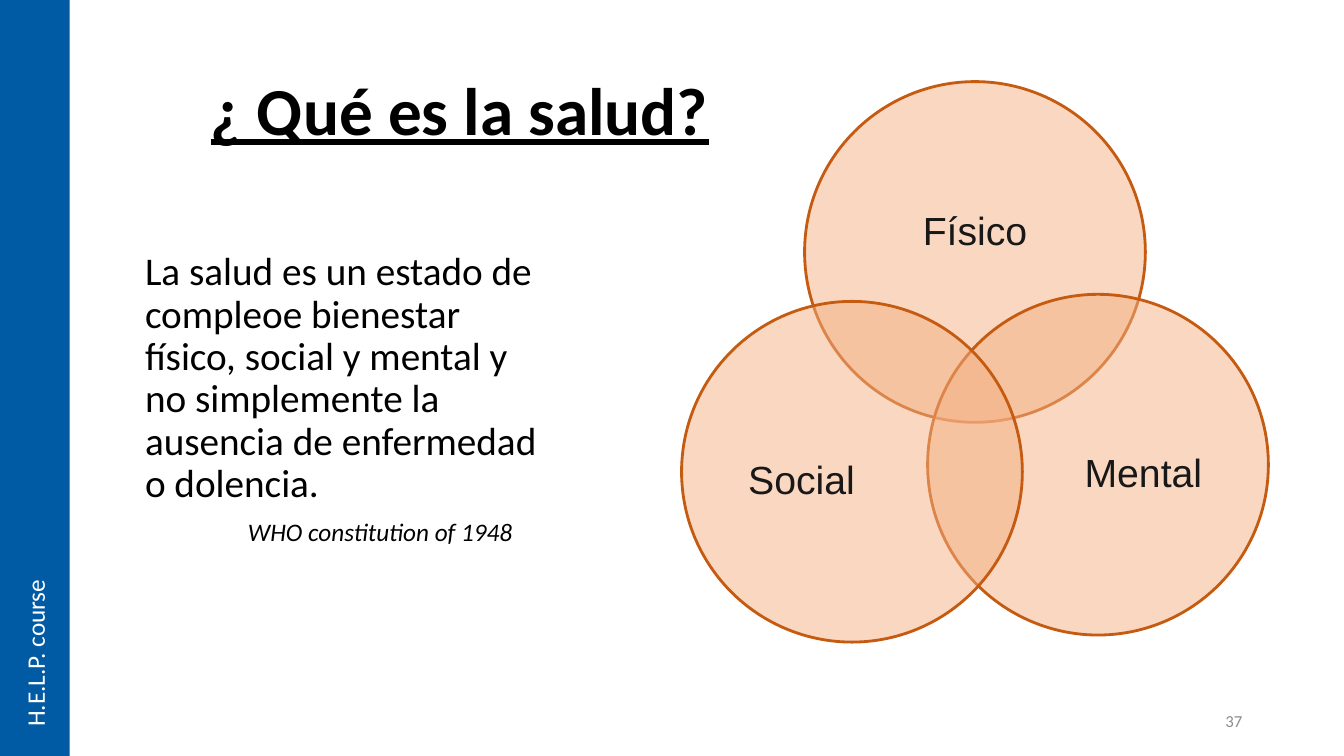
from lxml.etree import SubElement
from pptx import Presentation
from pptx.dml.color import RGBColor
from pptx.enum.shapes import MSO_SHAPE
from pptx.enum.text import MSO_ANCHOR, PP_ALIGN
from pptx.oxml.ns import qn
from pptx.util import Inches, Pt

COLORS = {
    "blue": "005BA4",
    "circle": "F4B183",
    "outline": "C55A11",
    "label": "181818",
    "black": "000000",
    "white": "FFFFFF",
    "gray": "8C8C8C",
}
CIRCLE_SIZE = 3.38


def color(name):
    return RGBColor.from_string(COLORS[name])


def style_paragraph(para, text, size, tint, font="Calibri", align=PP_ALIGN.LEFT, indent=0):
    para.text = text
    para.alignment = align
    para.font.name = font
    para.font.size = Pt(size)
    para.font.color.rgb = color(tint)
    if indent:
        properties = para._p.get_or_add_pPr()
        properties.set("marL", str(Inches(indent)))
        properties.set("indent", "0")


def add_text_frame(page, box, anchor=MSO_ANCHOR.MIDDLE):
    frame = page.shapes.add_textbox(*map(Inches, box)).text_frame
    frame.word_wrap = True
    frame.vertical_anchor = anchor
    return frame


def add_title(page, box):
    para = add_text_frame(page, box).paragraphs[0]
    style_paragraph(para, "¿ Qué es la salud?", 48, "black", align=PP_ALIGN.CENTER)
    para.line_spacing = 0.9
    para.font.bold = True
    para.font.underline = True


def add_definition(page, box):
    frame = add_text_frame(page, box, MSO_ANCHOR.TOP)
    definition = frame.paragraphs[0]
    style_paragraph(
        definition,
        "La salud es un estado de compleoe bienestar físico, social y mental y "
        "no simplemente la ausencia de enfermedad o dolencia.",
        28, "black",
    )
    citation = frame.add_paragraph()
    style_paragraph(citation, "WHO constitution of 1948", 18, "black", indent=1.02)
    citation.font.italic = True
    for para in frame.paragraphs:
        para.line_spacing = 0.9
        para.space_before = Pt(10)


def add_circle(page, left, top):
    size = Inches(CIRCLE_SIZE)
    circle = page.shapes.add_shape(MSO_SHAPE.OVAL, Inches(left), Inches(top), size, size)
    circle.shadow.inherit = False
    circle.fill.solid()
    circle.fill.fore_color.rgb = color("circle")
    tint = circle._element.spPr.find(qn("a:solidFill")).find(qn("a:srgbClr"))
    SubElement(tint, qn("a:alpha")).set("val", "50000")
    circle.line.color.rgb = color("outline")
    circle.line.width = Pt(2)


def add_venn(page, box):
    left, top, width, height = box
    right = left + width - CIRCLE_SIZE
    bottom = top + height - CIRCLE_SIZE
    circles = [
        ("Físico", (left + right) / 2, top, 0, -0.19),
        ("Mental", right, bottom - 0.07, 0.45, 0.1),
        ("Social", left, bottom, -0.5, 0.1),
    ]
    label_width, label_height = 1.75, 1
    for name, x, y, shift_x, shift_y in circles:
        add_circle(page, x, y)
        label_box = (
            x + (CIRCLE_SIZE - label_width) / 2 + shift_x,
            y + (CIRCLE_SIZE - label_height) / 2 + shift_y,
            label_width,
            label_height,
        )
        para = add_text_frame(page, label_box).paragraphs[0]
        style_paragraph(para, name, 28, "label", "Arial", PP_ALIGN.CENTER)
        para.line_spacing = 0.9


def add_page_number(page, box):
    para = add_text_frame(page, box).paragraphs[0]
    style_paragraph(para, "37", 12, "gray", align=PP_ALIGN.RIGHT)


def add_sidebar(page, box):
    bar = page.shapes.add_shape(MSO_SHAPE.RECTANGLE, *map(Inches, box))
    bar.shadow.inherit = False
    bar.fill.solid()
    bar.fill.fore_color.rgb = color("blue")
    bar.line.fill.background()
    frame = bar.text_frame
    frame.vertical_anchor = MSO_ANCHOR.MIDDLE
    frame._txBody.bodyPr.set("vert", "vert270")
    style_paragraph(frame.paragraphs[0], "H.E.L.P. course", 18, "white", indent=0.19)


def main():
    deck = Presentation()
    deck.slide_width = Inches(13.33)
    deck.slide_height = Inches(7.5)
    page = deck.slides.add_slide(deck.slide_layouts[6])
    add_title(page, (1.61, 0.69, 5.9, 0.87))
    add_definition(page, (1.34, 2.45, 4.16, 3.49))
    add_venn(page, (6.76, 0.81, 5.82, 5.56))
    add_page_number(page, (9.42, 6.95, 3, 0.4))
    add_sidebar(page, (0, 0, 0.69, 7.5))
    deck.save("out.pptx")


if __name__ == "__main__":
    main()
